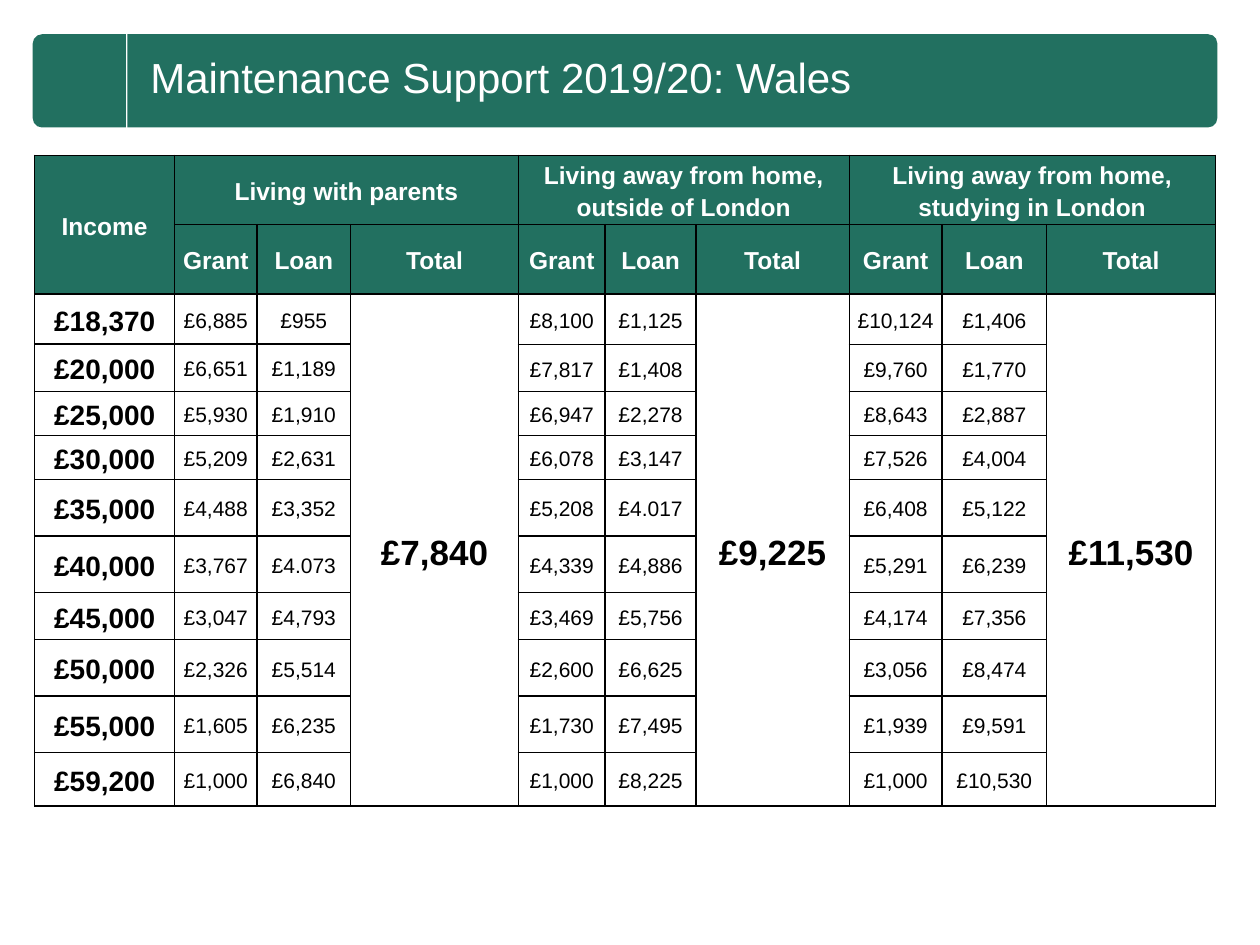
import pptx
import pptx.util
import pptx.dml.color
import pptx.enum.shapes
import pptx.enum.text
import pptx.oxml
import pptx.oxml.ns

Cm = pptx.util.Cm
Pt = pptx.util.Pt

GREEN, WHITE, BLACK = "227060", "FFFFFF", "000000"

COLS = [2.82, 1.66, 1.89, 3.38, 1.75, 1.83, 3.09, 1.87, 2.11, 3.4]
# The hairline row lets the first two incomes meet at staggered heights.
ROWS = [1.4, 1.4, 1.01, 0.01, 0.94, 0.89, 0.89, 1.14, 1.14, 0.95, 1.14, 1.14, 1.07]

GROUPS = [
    ("Living with parents", "£7,840"),
    ("Living away from home, outside of London", "£9,225"),
    ("Living away from home, studying in London", "£11,530"),
]
# Income, then grant and loan for each group
RATES = [
    ("£18,370", "£6,885", "£955", "£8,100", "£1,125", "£10,124", "£1,406"),
    ("£20,000", "£6,651", "£1,189", "£7,817", "£1,408", "£9,760", "£1,770"),
    ("£25,000", "£5,930", "£1,910", "£6,947", "£2,278", "£8,643", "£2,887"),
    ("£30,000", "£5,209", "£2,631", "£6,078", "£3,147", "£7,526", "£4,004"),
    ("£35,000", "£4,488", "£3,352", "£5,208", "£4.017", "£6,408", "£5,122"),
    ("£40,000", "£3,767", "£4.073", "£4,339", "£4,886", "£5,291", "£6,239"),
    ("£45,000", "£3,047", "£4,793", "£3,469", "£5,756", "£4,174", "£7,356"),
    ("£50,000", "£2,326", "£5,514", "£2,600", "£6,625", "£3,056", "£8,474"),
    ("£55,000", "£1,605", "£6,235", "£1,730", "£7,495", "£1,939", "£9,591"),
    ("£59,200", "£1,000", "£6,840", "£1,000", "£8,225", "£1,000", "£10,530"),
]
RATE_COLS = [0, 1, 2, 4, 5, 7, 8]


def paint(color, value):
    color.rgb = pptx.dml.color.RGBColor.from_string(value)


def style(frame, size, value, bold=False):
    for run in frame.paragraphs[0].runs:
        run.font.name = "Arial"
        run.font.size = Pt(size)
        run.font.bold = bold
        paint(run.font.color, value)


def add_end(slide, left, top, width, height, turn):
    """Draw a bar with one rounded end, turned a quarter within its box."""
    shape = slide.shapes.add_shape(
        pptx.enum.shapes.MSO_SHAPE.ROUND_2_SAME_RECTANGLE,
        Cm(left + (width - height) / 2), Cm(top + (height - width) / 2),
        Cm(height), Cm(width))
    shape.rotation = turn
    shape.adjustments[0] = 0.1
    shape.shadow.inherit = False
    shape.fill.solid()
    paint(shape.fill.fore_color, GREEN)
    shape.line.fill.background()


def add_title(slide, left, top, width, height):
    gap = 0.03
    add_end(slide, left, top, height, height, 270)
    start = height + gap
    add_end(slide, left + start, top, width - start, height, 90)
    box = slide.shapes.add_textbox(
        Cm(left + 2.24), Cm(top + 0.22), Cm(width - 2.04), Cm(1.27))
    frame = box.text_frame
    frame.word_wrap = True
    frame.auto_size = pptx.enum.text.MSO_AUTO_SIZE.SHAPE_TO_FIT_TEXT
    frame.margin_left = frame.margin_right = Cm(0.13)
    frame.margin_top = frame.margin_bottom = Cm(0.13)
    frame.text = "Maintenance Support 2019/20: Wales"
    style(frame, 24, WHITE)


def rule(cell):
    """Give a cell a thin black border on each side."""
    props = cell._tc.get_or_add_tcPr()
    for place, side in enumerate("LRTB"):
        props.insert(place, pptx.oxml.parse_xml(
            f'<a:ln{side} {pptx.oxml.ns.nsdecls("a")} w="12700"><a:solidFill>'
            f'<a:srgbClr val="{BLACK}"/></a:solidFill></a:ln{side}>'))


def write(table, row, col, text, size, span=(1, 1), bold=True, head=False):
    cell = table.cell(row, col)
    if span != (1, 1):
        cell.merge(table.cell(row + span[0] - 1, col + span[1] - 1))
    cell.text = text
    cell.text_frame.paragraphs[0].alignment = pptx.enum.text.PP_ALIGN.CENTER
    cell.text_frame.paragraphs[0].line_spacing = 1.15
    style(cell.text_frame, size, WHITE if head else BLACK, bold)
    if head:
        cell.fill.solid()
        paint(cell.fill.fore_color, GREEN)


def add_rates(slide, left, top):
    table = slide.shapes.add_table(
        len(ROWS), len(COLS), Cm(left), Cm(top), Cm(sum(COLS)), Cm(sum(ROWS))).table
    table.first_row = table.horz_banding = False
    for col, width in zip(table.columns, COLS):
        col.width = Cm(width)
    for row, height in zip(table.rows, ROWS):
        row.height = Cm(height)
    for cell in table.iter_cells():
        cell.margin_left = cell.margin_right = Cm(0.15)
        cell.margin_top = cell.margin_bottom = 0
        cell.vertical_anchor = pptx.enum.text.MSO_ANCHOR.MIDDLE
        cell.fill.background()
        rule(cell)

    write(table, 0, 0, "Income", 14, (2, 1), head=True)
    for group, (name, total) in enumerate(GROUPS):
        first = 1 + 3 * group
        write(table, 0, first, name, 14, (1, 3), head=True)
        for step, label in enumerate(("Grant", "Loan", "Total")):
            write(table, 1, first + step, label, 14, head=True)
        write(table, 2, first + 2, total, 20, (len(ROWS) - 2, 1))

    for index, rates in enumerate(RATES):
        for col, text in zip(RATE_COLS, rates):
            row, tall = index + 3 if index else 2, 1
            if index == 1 and col < 3:
                row, tall = 3, 2
            elif index == 0 and col > 3:
                tall = 2
            write(table, row, col, text, 12 if col else 16, (tall, 1), bold=col == 0)


def main():
    deck = pptx.Presentation()
    deck.slide_width, deck.slide_height = Cm(25.4), Cm(19.05)
    slide = deck.slides.add_slide(deck.slide_layouts[6])
    add_title(slide, 0.66, 0.69, 23.88, 1.88)
    add_rates(slide, 0.7, 3.13)
    deck.save("out.pptx")


if __name__ == "__main__":
    main()
